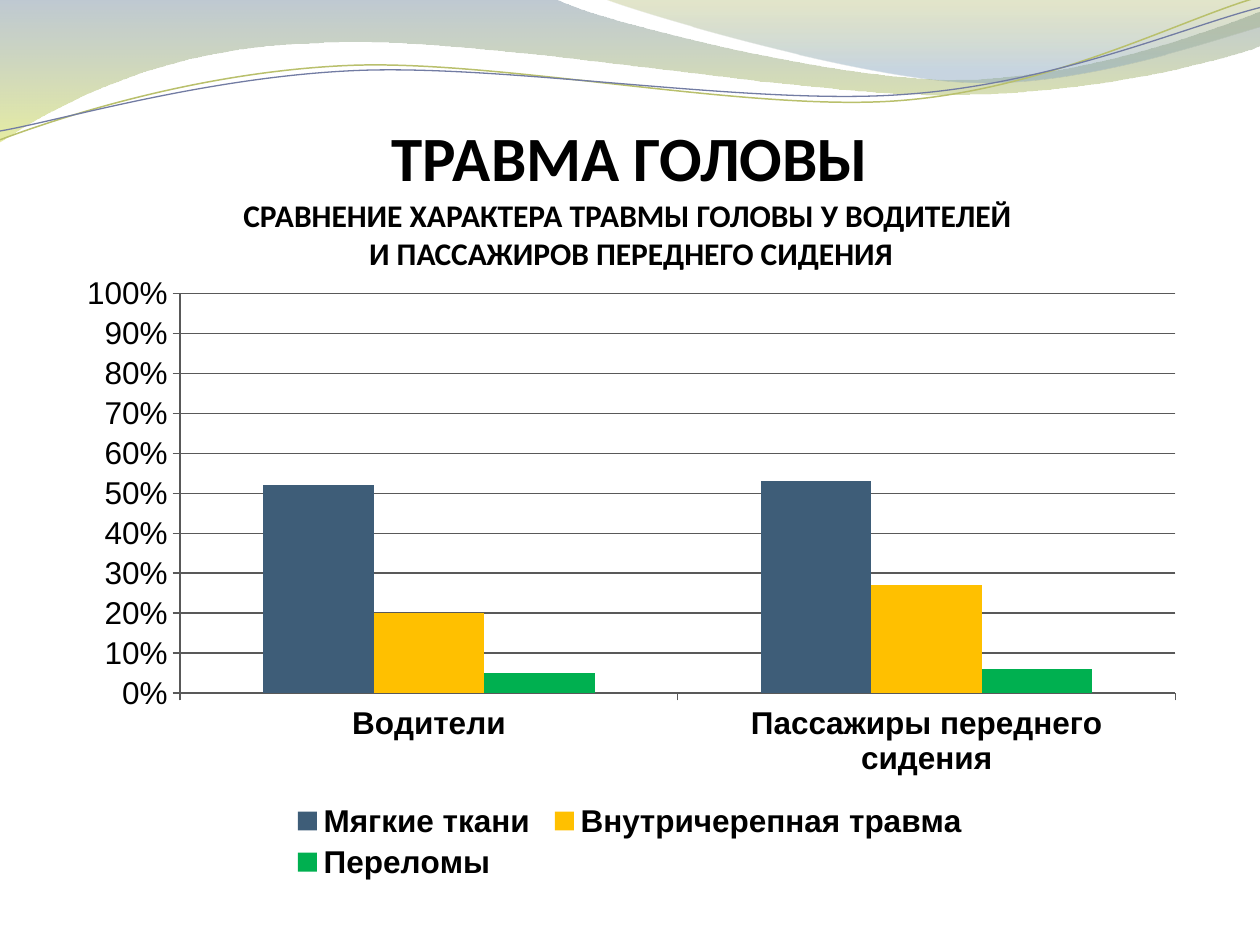
from dataclasses import dataclass
from typing import Optional

from lxml import etree
from pptx import Presentation
from pptx.chart.data import CategoryChartData
from pptx.dml.color import RGBColor
from pptx.enum.chart import XL_CHART_TYPE, XL_LEGEND_POSITION, XL_TICK_MARK
from pptx.enum.text import MSO_ANCHOR, PP_ALIGN
from pptx.oxml.ns import qn
from pptx.util import Inches, Pt

COLUMNS = XL_CHART_TYPE.COLUMN_CLUSTERED
BOTTOM_LEGEND = XL_LEGEND_POSITION.BOTTOM
TICK_OUTSIDE = XL_TICK_MARK.OUTSIDE
CENTER = PP_ALIGN.CENTER
ANCHOR_BOTTOM, ANCHOR_MIDDLE = MSO_ANCHOR.BOTTOM, MSO_ANCHOR.MIDDLE
BLACK, AXIS_GRAY = "000000", "595959"

# Left, top, width and height in inches on the slide
CHART_BOX = (0.51, 2.1, 9, 4.95)
PLOT_BOX = (1.43, 2.33, 7.9, 3.17)
LEGEND_BOX = (2.25, 6.33, 5.5, 0.7)


@dataclass
class Stop:
    position: float
    color: str
    opacity: int


@dataclass
class Wave:
    """A start point, then segments: 2 numbers for a line, 6 for a curve."""
    start: tuple
    segments: list
    stops: Optional[list] = None
    line_color: str = ""
    line_width: float = 0


@dataclass
class TextBlock:
    box: tuple
    lines: list
    size: int
    anchor: MSO_ANCHOR
    margins: tuple


@dataclass
class Series:
    name: str
    values: tuple
    color: str


WAVES = [
    Wave((0, 0), [
        (4.4, -0.01),
        (4.76, 0.17, 6.64, 0.63, 7.58, 0.63), (8.53, 0.63, 9.58, 0.26, 10, 0.09),
        (10.01, 0.36),
        (9.83, 0.44, 8.7, 0.76, 7.46, 0.75), (6.22, 0.75, 3.82, 0.28, 2.57, 0.34),
        (1.29, 0.36, 0.46, 0.83, -0.01, 1.13), (0, 0)],
        stops=[Stop(0, "72889B", 45), Stop(1, "D3DE57", 55)]),
    Wave((4.79, -0.01), [
        (5.09, 0.11, 6.82, 0.62, 7.69, 0.65), (8.56, 0.69, 9.61, 0.32, 10, 0.21),
        (10, 0), (4.79, -0.01)],
        stops=[Stop(0, "A4AC50", 30), Stop(0.8, "84A3BD", 45)]),
    Wave((0, 1.11), [
        (0.48, 0.93, 1.58, 0.57, 2.77, 0.52), (3.95, 0.47, 5.93, 0.89, 7.13, 0.8),
        (8.33, 0.71, 9.38, 0.15, 9.98, -0.02)],
        line_color="B9C06C", line_width=0.85),
    Wave((0, 1.04), [
        (0.47, 0.96, 1.64, 0.61, 2.83, 0.56), (4.03, 0.51, 5.97, 0.84, 7.17, 0.75),
        (8.36, 0.67, 9.41, 0.21, 10, 0.06)],
        line_color="727CA3", line_width=0.75),
]

TEXTS = [
    TextBlock((0.5, 0.77, 9, 0.77), ["ТРАВМА ГОЛОВЫ"], 36, ANCHOR_BOTTOM,
              (0, 0.05, 0, 0)),
    TextBlock((0.51, 1.54, 9, 0.63),
              ["СРАВНЕНИЕ ХАРАКТЕРА ТРАВМЫ ГОЛОВЫ У ВОДИТЕЛЕЙ ",
               "И ПАССАЖИРОВ ПЕРЕДНЕГО СИДЕНИЯ"], 18, ANCHOR_MIDDLE,
              (0.1, 0.05, 0.1, 0.05)),
]

CATEGORIES = ["Водители", "Пассажиры переднего сидения"]
SERIES = [
    Series("Мягкие ткани", (0.52, 0.53), "3E5D78"),
    Series("Внутричерепная травма", (0.2, 0.27), "FFC000"),
    Series("Переломы", (0.05, 0.06), "00B050"),
]


def rgb(color: str) -> RGBColor:
    return RGBColor.from_string(color)


def style_font(font, name: str, size: int, bold: bool) -> None:
    font.name, font.size, font.bold = name, Pt(size), bold
    font.color.rgb = rgb(BLACK)


def bend(shape, segments: list) -> None:
    """Merge the three line steps of every curve segment into one Bézier curve."""
    lines = iter(list(shape._element.iter(qn("a:lnTo"))))
    for segment in segments:
        steps = [next(lines) for _ in range(len(segment) // 2)]
        if len(steps) == 1:
            continue
        curve = etree.Element(qn("a:cubicBezTo"))
        steps[0].addprevious(curve)
        for step in steps:
            curve.append(step[0])
            step.getparent().remove(step)


def add_wave(slide, wave: Wave) -> None:
    builder = slide.shapes.build_freeform(*map(Inches, wave.start))
    points = [(Inches(segment[i]), Inches(segment[i + 1]))
              for segment in wave.segments for i in range(0, len(segment), 2)]
    builder.add_line_segments(points, close=wave.stops is not None)
    shape = builder.convert_to_shape()
    bend(shape, wave.segments)
    shape.shadow.inherit = False
    if wave.stops is None:
        shape.fill.background()
        shape.line.color.rgb = rgb(wave.line_color)
        shape.line.width = Pt(wave.line_width)
        return
    shape.line.fill.background()
    shape.fill.gradient()
    shape.fill.gradient_angle = 270
    for gradient_stop, stop in zip(shape.fill.gradient_stops, wave.stops):
        gradient_stop.position = stop.position
        gradient_stop.color.rgb = rgb(stop.color)
    for color, stop in zip(shape._element.spPr.iter(qn("a:srgbClr")), wave.stops):
        etree.SubElement(color, qn("a:alpha"), val=str(stop.opacity * 1000))


def add_text(slide, block: TextBlock) -> None:
    frame = slide.shapes.add_textbox(*map(Inches, block.box)).text_frame
    frame.word_wrap = True
    frame.vertical_anchor = block.anchor
    (frame.margin_left, frame.margin_top,
     frame.margin_right, frame.margin_bottom) = map(Inches, block.margins)
    frame.text = "\n".join(block.lines)
    for paragraph in frame.paragraphs:
        paragraph.alignment = CENTER
        style_font(paragraph.font, "Calibri", block.size, True)


def set_layout(parent, before: str, box: tuple, inner: bool = False) -> None:
    """Place a chart part, given in slide inches, by fractions of the chart."""
    left, top, width, height = CHART_BOX
    fractions = ((box[0] - left) / width, (box[1] - top) / height,
                 box[2] / width, box[3] / height)
    for old in parent.findall(qn("c:layout")):
        parent.remove(old)
    layout = etree.Element(qn("c:layout"))
    manual = etree.SubElement(layout, qn("c:manualLayout"))
    if inner:
        etree.SubElement(manual, qn("c:layoutTarget"), val="inner")
    for tag in ("xMode", "yMode"):
        etree.SubElement(manual, qn("c:" + tag), val="edge")
    for tag, value in zip("xywh", fractions):
        etree.SubElement(manual, qn("c:" + tag), val=f"{value:.4f}")
    parent.find(qn(before)).addprevious(layout)


def style_line(line) -> None:
    line.color.rgb = rgb(AXIS_GRAY)
    line.width = Pt(0.75)


def style_axis(axis, bold: bool) -> None:
    axis.major_tick_mark = TICK_OUTSIDE
    style_line(axis.format.line)
    style_font(axis.tick_labels.font, "Arial", 18, bold)


def add_injury_chart(slide) -> None:
    data = CategoryChartData(number_format="0%")
    data.categories = CATEGORIES
    for series in SERIES:
        data.add_series(series.name, series.values)
    chart = slide.shapes.add_chart(COLUMNS, *map(Inches, CHART_BOX), data).chart
    chart.has_title = False
    style_font(chart.font, "Vollkorn", 18, False)

    plot = chart.plots[0]
    plot.gap_width, plot.overlap, plot.vary_by_categories = 150, 0, False
    for drawn, series in zip(plot.series, SERIES):
        drawn.format.fill.solid()
        drawn.format.fill.fore_color.rgb = rgb(series.color)

    style_axis(chart.category_axis, True)
    values = chart.value_axis
    style_axis(values, False)
    values.minimum_scale, values.maximum_scale, values.major_unit = 0, 1, 0.1
    values.tick_labels.number_format = "0%"
    values.tick_labels.number_format_is_linked = False
    style_line(values.major_gridlines.format.line)

    chart.has_legend = True
    legend = chart.legend
    legend.position, legend.include_in_layout = BOTTOM_LEGEND, False
    style_font(legend.font, "Arial", 18, True)
    set_layout(legend._element, "c:overlay", LEGEND_BOX)
    set_layout(plot._element.getparent(), "c:barChart", PLOT_BOX, inner=True)


def main() -> None:
    presentation = Presentation()
    presentation.slide_width, presentation.slide_height = Inches(10), Inches(7.5)
    slide = presentation.slides.add_slide(presentation.slide_layouts[6])
    # Wavy header
    for wave in WAVES:
        add_wave(slide, wave)
    # Title and subtitle
    for block in TEXTS:
        add_text(slide, block)
    # Comparison chart
    add_injury_chart(slide)
    presentation.save("out.pptx")


if __name__ == "__main__":
    main()
